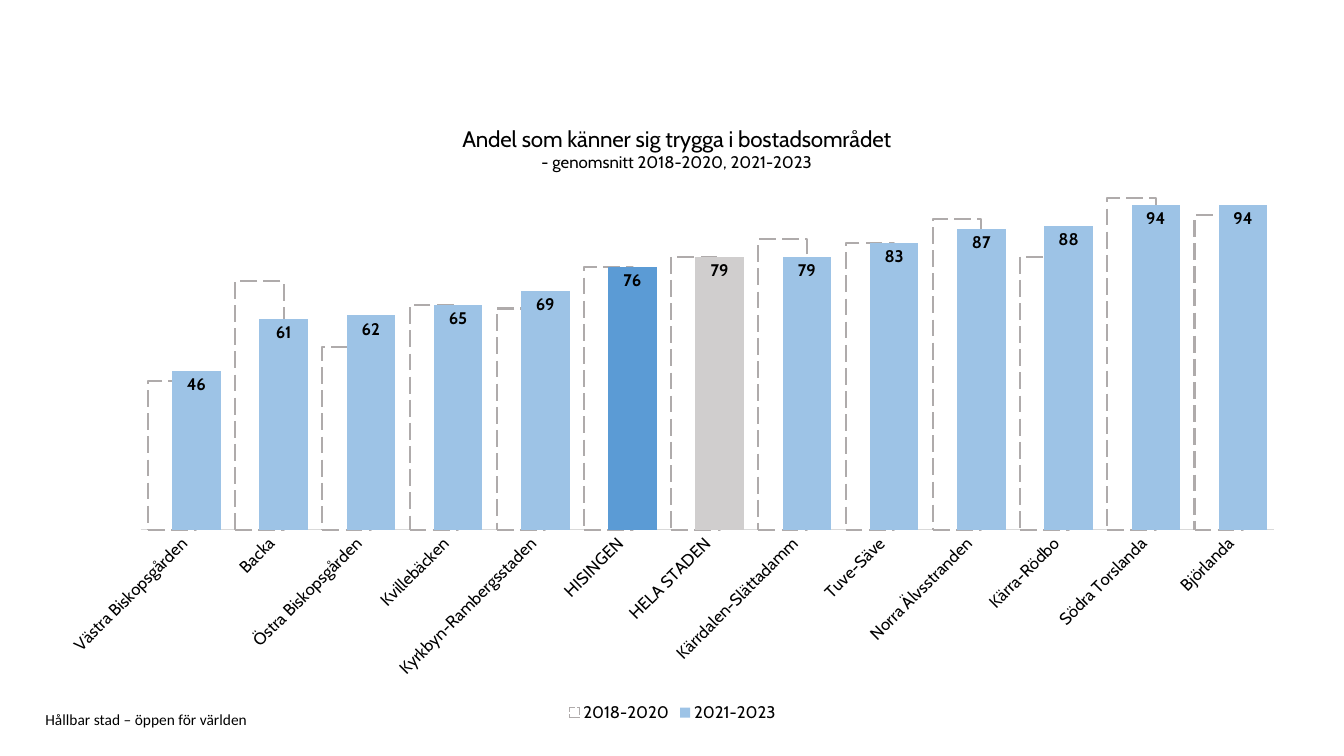
from pptx import Presentation
from pptx.chart.data import CategoryChartData
from pptx.dml.color import RGBColor
from pptx.enum.chart import (XL_CHART_TYPE as ChartType, XL_LABEL_POSITION as LabelPosition,
                             XL_LEGEND_POSITION as LegendPosition, XL_TICK_MARK as TickMark)
from pptx.enum.dml import MSO_LINE as LineDash
from pptx.enum.text import MSO_ANCHOR as Anchor
from pptx.oxml import parse_xml
from pptx.oxml.ns import nsdecls, qn
from pptx.util import Inches, Pt


def color(hex_value):
    return RGBColor.from_string(hex_value)


def place(parent, index, target="", **fractions):
    """Give a chart part a manual position, in fractions of the chart."""
    for old in parent.findall(qn("c:layout")):
        parent.remove(old)
    modes = '<c:xMode val="edge"/><c:yMode val="edge"/>'
    values = "".join(f'<c:{key} val="{value}"/>' for key, value in fractions.items())
    parent.insert(index, parse_xml(
        f'<c:layout {nsdecls("c")}><c:manualLayout>{target}{modes}{values}'
        '</c:manualLayout></c:layout>'))


prs = Presentation()
prs.slide_width, prs.slide_height = Inches(13.33), Inches(7.5)
slide = prs.slides.add_slide(prs.slide_layouts[6])

# Footer
footer = slide.shapes.add_textbox(Inches(0.45), Inches(7.06), Inches(9.45), Inches(0.16)).text_frame
footer.margin_left = footer.margin_right = footer.margin_top = footer.margin_bottom = 0
footer.word_wrap = True
footer.vertical_anchor = Anchor.MIDDLE
footer.text = "Hållbar stad – öppen för världen"
footer_font = footer.paragraphs[0].runs[0].font
footer_font.name, footer_font.size = "Calibri", Pt(11)
footer_font.color.rgb = color("000000")

# Share feeling safe, per area: earlier and later period
areas = [
    ("Västra Biskopsgården", 43, 46),
    ("Backa", 72, 61),
    ("Östra Biskopsgården", 53, 62),
    ("Kvillebäcken", 65, 65),
    ("Kyrkbyn-Rambergsstaden", 64, 69),
    ("HISINGEN", 76, 76),
    ("HELA STADEN", 79, 79),
    ("Kärrdalen-Slättadamm", 84, 79),
    ("Tuve-Säve", 83, 83),
    ("Norra Älvsstranden", 90, 87),
    ("Kärra-Rödbo", 79, 88),
    ("Södra Torslanda", 96, 94),
    ("Björlanda", 91, 94),
]
names, earlier_values, later_values = zip(*areas)
safety = CategoryChartData(number_format="0")
safety.categories = names
safety.add_series("2018-2020", earlier_values)
safety.add_series("2021-2023", later_values)
chart = slide.shapes.add_chart(ChartType.COLUMN_CLUSTERED, Inches(0.45), Inches(0.95),
                               Inches(12.44), Inches(6.26), safety).chart
chart.font.name, chart.font.size = "Cabin", Pt(12)
chart.font.color.rgb = color("000000")

# Title in two lines
chart.has_title = True
title = chart.chart_title.text_frame
title.text = "Andel som känner sig trygga i bostadsområdet\n- genomsnitt 2018-2020, 2021-2023"
for line, size in zip(title.paragraphs, (16, 12)):
    line_font = line.runs[0].font
    line_font.name, line_font.size, line_font.bold = "Cabin", Pt(size), False
    line_font.color.rgb = color("000000")
chart.chart_title.include_in_layout = False
place(chart.chart_title._element, 1, x=0.33, y=0.04)

# Axes
area_axis = chart.category_axis
area_axis.major_tick_mark = TickMark.NONE
area_axis.format.line.color.rgb = color("D9D9D9")
area_axis.format.line.width = Pt(0.75)
area_axis.tick_labels.font.size = Pt(12)
area_axis._element.find(qn("c:txPr")).find(qn("a:bodyPr")).set("rot", "-2700000")
share_axis = chart.value_axis
share_axis.minimum_scale, share_axis.maximum_scale = 0, 100
share_axis.has_major_gridlines = False
share_axis.visible = False

# Columns
plot = chart.plots[0]
plot.gap_width, plot.overlap = 30, 50
plot.vary_by_categories = False
place(chart._chartSpace.chart.plotArea, 0, '<c:layoutTarget val="inner"/>',
      x=0.076, y=0.14, w=0.904, h=0.548)
earlier, later = plot.series
for series, fill in ((earlier, "FFFFFF"), (later, "9DC3E6")):
    series.format.fill.solid()
    series.format.fill.fore_color.rgb = color(fill)
outline = earlier.format.line
outline.color.rgb = color("AFABAB")
outline.width = Pt(1.5)
outline.dash_style = LineDash.LONG_DASH
for name, fill in (("HISINGEN", "5B9BD5"), ("HELA STADEN", "D0CECE")):
    highlight = later.points[names.index(name)].format.fill
    highlight.solid()
    highlight.fore_color.rgb = color(fill)

# Value labels
labels = later.data_labels
labels.show_value = True
labels.position = LabelPosition.INSIDE_END
labels.number_format, labels.number_format_is_linked = "0", False
labels.font.name, labels.font.size, labels.font.bold = "Cabin", Pt(12), True
labels.font.color.rgb = color("000000")

# Legend
chart.has_legend = True
chart.legend.position = LegendPosition.BOTTOM
chart.legend.include_in_layout = False

prs.save("out.pptx")
